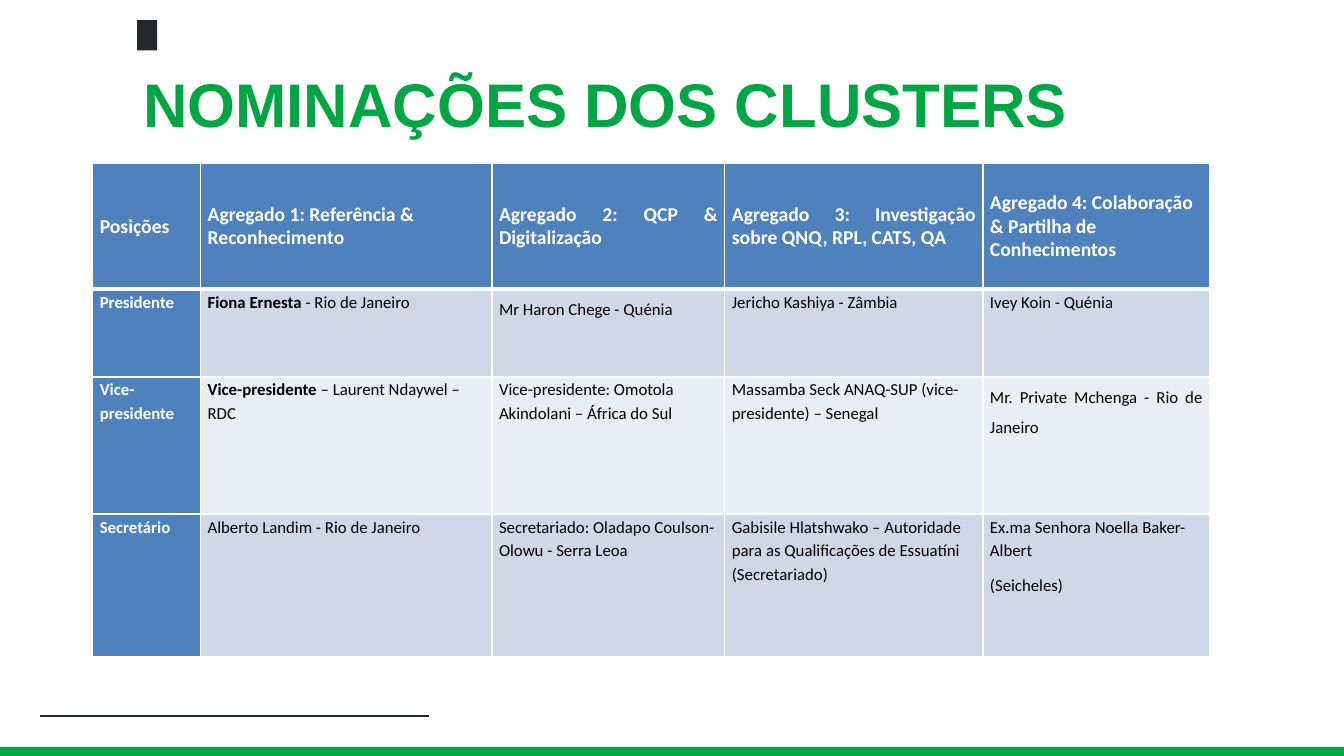
import pptx
import pptx.util
import pptx.dml.color
import pptx.enum.shapes
import pptx.enum.text
import pptx.oxml.ns
from lxml import etree

Inches = pptx.util.Inches
Pt = pptx.util.Pt
RGBColor = pptx.dml.color.RGBColor
Align = pptx.enum.text.PP_ALIGN
Anchor = pptx.enum.text.MSO_ANCHOR
qn = pptx.oxml.ns.qn

GREEN = RGBColor(0x00, 0xA6, 0x43)
DARK = RGBColor(0x23, 0x28, 0x2A)
BLUE = RGBColor(0x4F, 0x81, 0xBD)
BANDS = [RGBColor(0xD0, 0xD8, 0xE8), RGBColor(0xE9, 0xED, 0xF4)]
WHITE = RGBColor(0xFF, 0xFF, 0xFF)
BLACK = RGBColor(0x00, 0x00, 0x00)

COLS = [1.07, 2.89, 2.31, 2.56, 2.25]
ROWS = [1.25, 0.87, 1.36, 1.41]
HEADS = [
    "Posições",
    "Agregado 1: Referência & Reconhecimento",
    "Agregado 2: QCP & Digitalização",
    "Agregado 3: Investigação sobre QNQ, RPL, CATS, QA",
    "Agregado 4: Colaboração & Partilha de Conhecimentos",
]
POSTS = [
    ["Presidente", "Fiona Ernesta - Rio de Janeiro", "Mr Haron Chege - Quénia",
     "Jericho Kashiya - Zâmbia", "Ivey Koin - Quénia"],
    ["Vice-presidente", "Vice-presidente – Laurent Ndaywel – RDC",
     "Vice-presidente: Omotola Akindolani – África do Sul",
     "Massamba Seck ANAQ-SUP (vice-presidente) – Senegal",
     "Mr. Private Mchenga - Rio de Janeiro"],
    ["Secretário", "Alberto Landim - Rio de Janeiro",
     "Secretariado: Oladapo Coulson-Olowu - Serra Leoa",
     "Gabisile Hlatshwako – Autoridade para as Qualificações de Essuatíni (Secretariado)",
     "Ex.ma Senhora Noella Baker-Albert\n(Seicheles)"],
]
LEADS = {(1, 1): "Fiona Ernesta", (2, 1): "Vice-presidente"}
SPREAD = {(0, 2), (0, 3), (1, 2), (2, 4)}


def write(frame, text, size=12, font="Calibri", color=BLACK, bold=False, lead="",
          align=Align.LEFT, line=None, after=None):
    """Write one paragraph per line of text, with an optional bold lead."""
    frame.word_wrap = True
    for index, words in enumerate(text.split("\n")):
        para = frame.paragraphs[0] if index == 0 else frame.add_paragraph()
        para.alignment = align
        if line:
            para.line_spacing = line
        if after:
            para.space_after = Pt(after)
        for part, heavy in ((lead, True), (words.removeprefix(lead), bold)):
            if part:
                run = para.add_run()
                run.text = part
                run.font.size = Pt(size)
                run.font.name = font
                run.font.bold = heavy
                run.font.color.rgb = color


def block(slide, left, top, width, height, color):
    """Draw a plain filled rectangle."""
    shape = slide.shapes.add_shape(pptx.enum.shapes.MSO_SHAPE.RECTANGLE, Inches(left),
                                   Inches(top), Inches(width), Inches(height))
    shape.shadow.inherit = False
    shape.fill.solid()
    shape.fill.fore_color.rgb = color
    shape.line.fill.background()


def edge(cell, side, width):
    """Give one side of a cell a white border."""
    line = etree.SubElement(cell._tc.get_or_add_tcPr(), qn("a:ln" + side), w=str(Pt(width)))
    fill = etree.SubElement(line, qn("a:solidFill"))
    etree.SubElement(fill, qn("a:srgbClr"), val=str(WHITE))


def frame(slide, width, height):
    """Draw the mark, the footer rule and the bottom bar."""
    block(slide, 0, height - 0.09, width, 0.09, GREEN)
    block(slide, 1.36, 0.2, 0.2, 0.3, DARK)
    rule = slide.shapes.add_connector(pptx.enum.shapes.MSO_CONNECTOR.STRAIGHT, Inches(0.4),
                                      Inches(height - 0.4), Inches(4.25), Inches(height - 0.4))
    rule.line.color.rgb = DARK
    rule.line.width = Pt(1.5)
    etree.SubElement(rule._element.spPr, qn("a:effectLst"))


def title(slide, left, top, width, height):
    """Place the slide title."""
    box = slide.shapes.add_textbox(Inches(left), Inches(top), Inches(width), Inches(height))
    text = box.text_frame
    text.margin_left = text.margin_right = text.margin_top = text.margin_bottom = 0
    write(text, "NOMINAÇÕES DOS CLUSTERS", size=44, font="Arial", color=GREEN, bold=True)


def fill_cell(cell, row, col, text):
    """Style and fill one cell according to its place in the grid."""
    cell.margin_left = cell.margin_right = Inches(0.07)
    cell.margin_top = cell.margin_bottom = 0
    head = row == 0
    label = head or col == 0
    for side, width in (("L", 1), ("R", 1), ("T", 3 if row == 1 else 1), ("B", 3 if head else 1)):
        edge(cell, side, width)
    cell.fill.solid()
    cell.fill.fore_color.rgb = BLUE if label else BANDS[(row - 1) % 2]
    cell.vertical_anchor = Anchor.MIDDLE if head else Anchor.TOP
    spread = (row, col) in SPREAD
    write(cell.text_frame, text, size=14 if head else 12, color=WHITE if label else BLACK,
          bold=label, lead=LEADS.get((row, col), ""),
          align=Align.JUSTIFY if spread else Align.LEFT,
          line=None if head else 1.5 if spread else 1.15, after=None if head else 8)


def grid(slide, left, top):
    """Build the table of cluster posts."""
    table = slide.shapes.add_table(len(ROWS), len(COLS), Inches(left), Inches(top),
                                   Inches(sum(COLS)), Inches(sum(ROWS))).table
    table.first_col = True
    for col, width in zip(table.columns, COLS):
        col.width = Inches(width)
    for row, height in zip(table.rows, ROWS):
        row.height = Inches(height)
    for row, texts in enumerate([HEADS] + POSTS):
        for col, text in enumerate(texts):
            fill_cell(table.cell(row, col), row, col, text)


def main():
    """Build and save the slide."""
    deck = pptx.Presentation()
    deck.slide_width = Inches(13.33)
    deck.slide_height = Inches(7.5)
    slide = deck.slides.add_slide(deck.slide_layouts[6])
    frame(slide, 13.33, 7.5)
    title(slide, 1.42, 0.65, 10.92, 0.74)
    grid(slide, 0.92, 1.62)
    deck.save("out.pptx")


if __name__ == "__main__":
    main()
